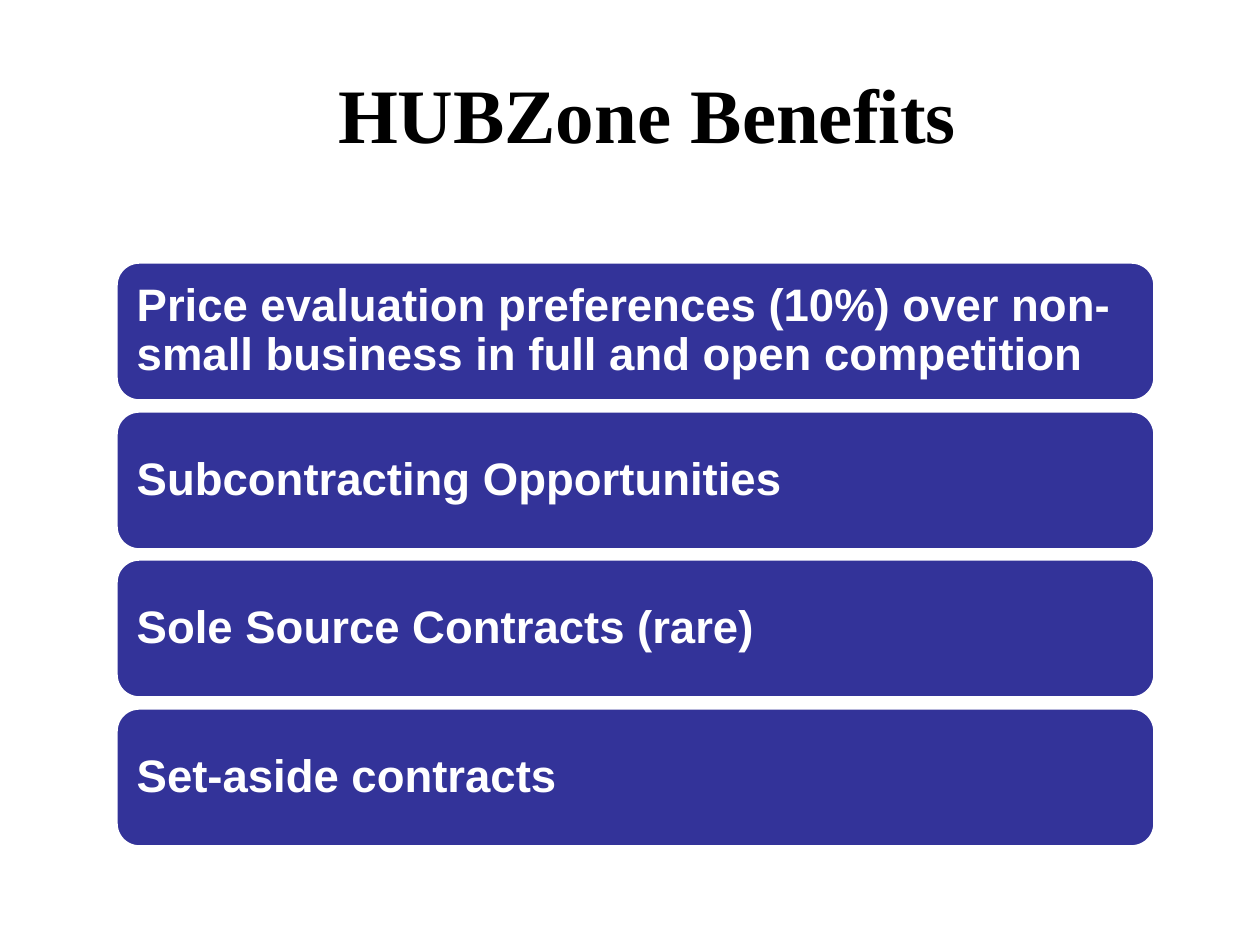
from pptx import Presentation
from pptx.dml.color import RGBColor
from pptx.enum.shapes import MSO_SHAPE
from pptx.enum.text import MSO_ANCHOR, MSO_AUTO_SIZE, PP_ALIGN
from pptx.util import Emu, Pt

COLORS = {"title": "000000", "bar": "333399", "white": "FFFFFF"}
BENEFITS = [
    "Price evaluation preferences (10%) over non-small business in full and open competition",
    "Subcontracting Opportunities",
    "Sole Source Contracts (rare)",
    "Set-aside contracts",
]
PX_PER_INCH = 126


def px(length):
    return Emu(round(length * 914400 / PX_PER_INCH))


def color(key):
    return RGBColor.from_string(COLORS[key])


class SlideBuilder:
    title_font, body_font = "Times New Roman", "Arial"

    def __init__(self, slide):
        self.slide = slide

    def set_text(self, frame, text, font_name, size, color_key, margins):
        frame.word_wrap = True
        frame.auto_size = MSO_AUTO_SIZE.NONE
        (frame.margin_left, frame.margin_top,
         frame.margin_right, frame.margin_bottom) = map(px, margins)
        paragraph = frame.paragraphs[0]
        paragraph.text = text
        paragraph.alignment = PP_ALIGN.LEFT
        font = paragraph.font
        font.name, font.size, font.bold = font_name, Pt(size), True
        font.color.rgb = color(color_key)
        return paragraph

    def title(self, text, left, top, width, height):
        heading = self.slide.shapes.title
        heading.left, heading.top, heading.width, heading.height = map(
            px, (left, top, width, height))
        frame = heading.text_frame
        frame.vertical_anchor = MSO_ANCHOR.TOP
        self.set_text(frame, text, self.title_font, 44, "title", (13, 14, 13, 0))

    def bar(self, text, left, top, width, height):
        bar = self.slide.shapes.add_shape(
            MSO_SHAPE.ROUNDED_RECTANGLE, *map(px, (left, top, width, height)))
        bar.shadow.inherit = False
        bar.fill.solid()
        bar.fill.fore_color.rgb = color("bar")
        bar.line.color.rgb = color("white")
        bar.line.width = Pt(2)
        frame = bar.text_frame
        frame.vertical_anchor = MSO_ANCHOR.MIDDLE
        benefit = self.set_text(frame, text, self.body_font, 26, "white", (14, 14, 14, 14))
        benefit.line_spacing = 0.9


def main():
    deck = Presentation()
    deck.slide_width, deck.slide_height = px(1260), px(945)
    builder = SlideBuilder(deck.slides.add_slide(deck.slide_layouts[5]))

    # Heading
    builder.title("HUBZone Benefits", 325, 53, 798, 106)

    # Stack of benefits, evenly spaced from first to last top edge
    first_top, last_top = 262, 708
    step = (last_top - first_top) / (len(BENEFITS) - 1)
    for row, benefit in enumerate(BENEFITS):
        builder.bar(benefit, 116, round(first_top + row * step), 1039, 139)

    deck.save("out.pptx")


if __name__ == "__main__":
    main()
